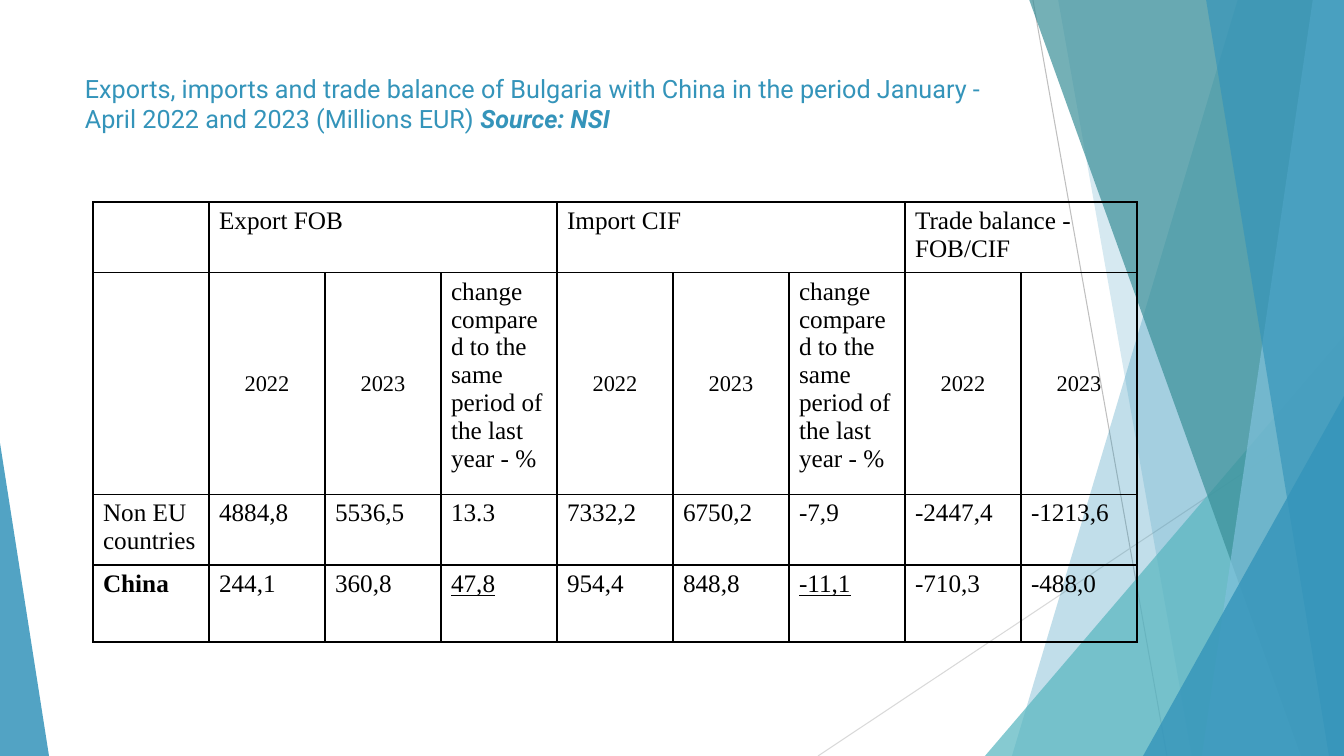
from lxml.etree import SubElement
from pptx import Presentation
from pptx.dml.color import RGBColor
from pptx.enum.shapes import MSO_CONNECTOR, MSO_SHAPE
from pptx.enum.text import MSO_ANCHOR, PP_ALIGN
from pptx.oxml.ns import qn
from pptx.util import Pt

PX = 914400 / 100.8
W, H = 1344, 756
BLUE, TEAL, DARK_TEAL, PALE_BLUE = "3494BA", "58B6C0", "3A8F98", "7FC1DB"
BLACK = "000000"


def px(n):
    return round(n * PX)


def rgb(color):
    return RGBColor.from_string(color)


class SlideBuilder:
    title_font = "Roboto"
    table_font = "Times New Roman"

    def __init__(self, prs):
        self.slide = prs.slides.add_slide(prs.slide_layouts[6])
        self.shapes = self.slide.shapes

    def line(self, start, end, color):
        cxn = self.shapes.add_connector(
            MSO_CONNECTOR.STRAIGHT, *map(px, start + end))
        cxn.line.color.rgb = rgb(color)
        cxn.line.width = Pt(0.75)
        SubElement(cxn._element.spPr, qn("a:effectLst"))

    def paint(self, sp, color, opacity):
        """Fill a shape at an opacity in percent, without line or shadow."""
        sp.fill.solid()
        sp.fill.fore_color.rgb = rgb(color)
        clr = sp._element.spPr.find(qn("a:solidFill"))[0]
        SubElement(clr, qn("a:alpha"), val=str(opacity * 1000))
        sp.line.fill.background()
        sp.shadow.inherit = False

    def band(self, top_x, bottom_x, color, opacity):
        """Fill from a slanted left edge to the right side of the slide."""
        builder = self.shapes.build_freeform(top_x, -1, scale=PX)
        builder.add_line_segments([(W, -1), (W, H), (bottom_x, H)], close=True)
        self.paint(builder.convert_to_shape(), color, opacity)

    def triangle(self, x, y, w, h, apex, color, opacity):
        sp = self.shapes.add_shape(
            MSO_SHAPE.ISOSCELES_TRIANGLE, *map(px, (x, y, w, h)))
        sp.adjustments[0] = apex
        self.paint(sp, color, opacity)

    def title(self, x, y, w, h, text, source):
        tf = self.shapes.add_textbox(*map(px, (x, y, w, h))).text_frame
        tf.word_wrap = True
        p = tf.paragraphs[0]
        p.font.size = Pt(18)
        p.font.name = self.title_font
        p.font.color.rgb = rgb(BLUE)
        p.add_run().text = text
        r = p.add_run()
        r.text = source
        r.font.bold = r.font.italic = True

    def table(self, x, y, col_width, row_heights, rows):
        n_cols = len(rows[0])
        frame = self.shapes.add_table(
            len(rows), n_cols, px(x), px(y),
            px(col_width * n_cols), px(sum(row_heights)))
        table = frame.table
        table.first_row = table.horz_banding = False
        for column in table.columns:
            column.width = px(col_width)
        for row, height, texts in zip(table.rows, row_heights, rows):
            row.height = px(height)
            for cell, text in zip(row.cells, texts):
                self.cell(cell, text)
        return table

    def cell(self, cell, text):
        tcPr = cell._tc.get_or_add_tcPr()
        for side in ("lnL", "lnR", "lnT", "lnB"):
            ln = SubElement(tcPr, qn(f"a:{side}"), w=str(Pt(1)))
            fill = SubElement(ln, qn("a:solidFill"))
            SubElement(fill, qn("a:srgbClr"), val=BLACK)
        cell.fill.background()
        cell.text = text
        font = cell.text_frame.paragraphs[0].font
        font.name = self.table_font
        font.size = Pt(18)
        font.color.rgb = rgb(BLACK)

    def year_cell(self, cell):
        cell.vertical_anchor = MSO_ANCHOR.MIDDLE
        cell.margin_left = cell.margin_right = cell.margin_top = px(1)
        cell.margin_bottom = 0
        p = cell.text_frame.paragraphs[0]
        p.alignment = PP_ALIGN.CENTER
        p.font.size = Pt(16)


def draw_background(s):
    s.line((1033, 0), (1167, H), "BFBFBF")
    s.line((W, 406), (818, H), "D9D9D9")
    s.band(1238, 1012, BLUE, 30)
    s.band(1058, 1192, BLUE, 20)
    s.triangle(985, 336, 359, 420, 1, TEAL, 72)
    s.band(1029, 1301, DARK_TEAL, 70)
    s.band(1313, 1202, PALE_BLUE, 70)
    s.band(1206, 1329, BLUE, 65)
    s.triangle(1143, 396, 201, 360, 1, BLUE, 80)
    s.triangle(0, 443, 49, 313, 0, BLUE, 85)


def draw_trade_table(s):
    years = ["2022", "2023"]
    change = "change compared to the same period of the last year - %"
    rows = [
        ["", "Export FOB", "", "", "Import CIF", "", "",
         "Trade balance - FOB/CIF", ""],
        ["", *years, change, *years, change, *years],
        ["Non EU countries", "4884,8", "5536,5", "13.3", "7332,2", "6750,2",
         "-7,9", "-2447,4", "-1213,6"],
        ["China", "244,1", "360,8", "47,8", "954,4", "848,8",
         "-11,1", "-710,3", "-488,0"],
    ]
    table = s.table(93, 202, 116, (66, 205, 66, 77), rows)
    for first, last in ((1, 3), (4, 6), (7, 8)):
        table.cell(0, first).merge(table.cell(0, last))
    for col, text in enumerate(rows[1]):
        if text in years:
            s.year_cell(table.cell(1, col))
        elif text == change:
            p = table.cell(3, col).text_frame.paragraphs[0]
            p.runs[0].font.underline = True
    table.cell(3, 0).text_frame.paragraphs[0].font.bold = True


def main():
    prs = Presentation()
    prs.slide_width, prs.slide_height = px(W), px(H)
    s = SlideBuilder(prs)
    draw_background(s)
    s.title(75, 68, 948, 76,
            "Exports, imports and trade balance of Bulgaria with China in the "
            "period January - April 2022 and 2023 (Millions EUR) ",
            "Source: NSI")
    draw_trade_table(s)
    prs.save("out.pptx")


if __name__ == "__main__":
    main()
